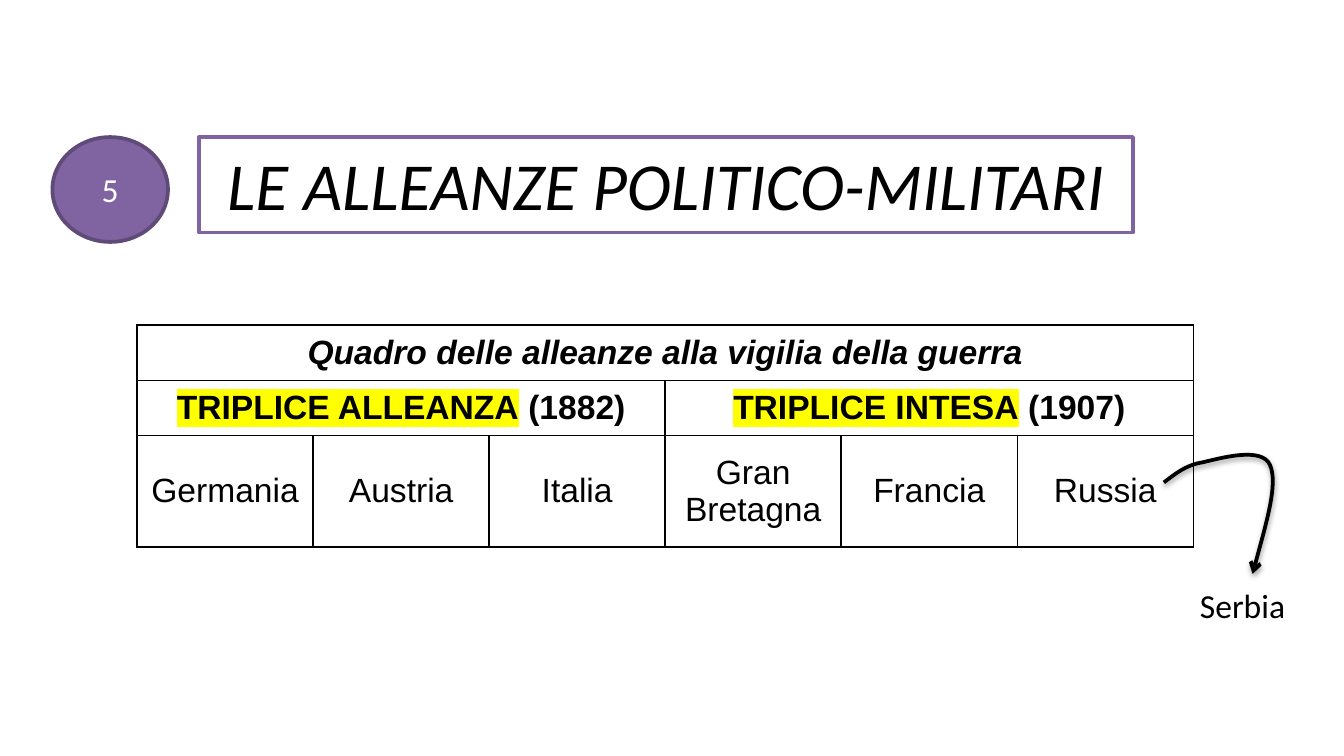
from lxml import etree
from pptx import Presentation
from pptx import util as u
from pptx.dml.color import RGBColor
from pptx.enum import shapes, text
from pptx.oxml import parse_xml
from pptx.oxml.ns import nsdecls, qn

BLACK = RGBColor(0x00, 0x00, 0x00)
WHITE = RGBColor(0xFF, 0xFF, 0xFF)
PURPLE = RGBColor(0x80, 0x64, 0xA2)
DARK_PURPLE = RGBColor(0x5F, 0x4A, 0x78)
YELLOW = RGBColor(0xFF, 0xFF, 0x00)

CENTER, LEFT = text.PP_ALIGN.CENTER, text.PP_ALIGN.LEFT
TOP, MIDDLE = text.MSO_ANCHOR.TOP, text.MSO_ANCHOR.MIDDLE


def grid(*cells):
    """Lengths on a square grid of 100 columns across the slide."""
    return [u.Inches(cell / 10) for cell in cells]


class SlideBuilder:
    font, table_font, size = "Calibri", "Arial", 18

    def __init__(self, presentation):
        self.slide = presentation.slides.add_slide(presentation.slide_layouts[6])

    def add_run(self, paragraph, words, color=BLACK, size=None, font=None,
                bold=False, italic=False, highlight=None):
        run = paragraph.add_run()
        run.text = words
        run.font.size = u.Pt(size or self.size)
        run.font.bold, run.font.italic = bold, italic
        run.font.color.rgb = color
        if highlight:
            mark = etree.SubElement(run.font._element, qn("a:highlight"))
            etree.SubElement(mark, qn("a:srgbClr"), val=str(highlight))
        run.font.name = font or self.font

    def fill_frame(self, frame, words, align=CENTER, anchor=TOP, grow=False, **style):
        frame.word_wrap = True
        frame.vertical_anchor = anchor
        if grow:
            frame.auto_size = text.MSO_AUTO_SIZE.SHAPE_TO_FIT_TEXT
        paragraph = frame.paragraphs[0]
        paragraph.alignment = align
        self.add_run(paragraph, words, **style)

    def shape(self, kind, box, fill, line, words, **style):
        shape = self.slide.shapes.add_shape(kind, *grid(*box))
        shape.shadow.inherit = False
        shape.fill.solid()
        shape.fill.fore_color.rgb = fill
        shape.line.color.rgb = line
        shape.line.width = u.Pt(2)
        self.fill_frame(shape.text_frame, words, **style)

    def label(self, box, words):
        shape = self.slide.shapes.add_textbox(*grid(*box))
        self.fill_frame(shape.text_frame, words, align=LEFT, grow=True)

    def border(self, cell):
        properties = cell._tc.get_or_add_tcPr()
        for position, side in enumerate(("lnL", "lnR", "lnT", "lnB")):
            properties.insert(position, parse_xml(
                f'<a:{side} {nsdecls("a")} w="12700"><a:solidFill>'
                f'<a:srgbClr val="{BLACK}"/></a:solidFill></a:{side}>'))

    def table(self, box, row_heights, rows):
        """Each row is a list of cells, each cell a list of (words, style) runs."""
        columns = max(len(row) for row in rows)
        table = self.slide.shapes.add_table(len(rows), columns, *grid(*box)).table
        table.first_row = table.horz_banding = False
        for row, height in zip(table.rows, grid(*row_heights)):
            row.height = height
        for cell in table.iter_cells():
            cell.fill.background()
            self.border(cell)
        for r, row in enumerate(rows):
            span = columns // len(row)
            for i, runs in enumerate(row):
                cell = table.cell(r, i * span)
                if span > 1:
                    cell.merge(table.cell(r, (i + 1) * span - 1))
                cell.margin_left = cell.margin_right = u.Inches(0.07)
                cell.margin_top = cell.margin_bottom = 0
                cell.vertical_anchor = MIDDLE
                paragraph = cell.text_frame.paragraphs[0]
                paragraph.alignment = CENTER
                for words, style in runs:
                    self.add_run(paragraph, words, font=self.table_font, **style)

    def curved_arrow(self, points):
        """Start point, then three points for each Bezier segment."""
        start, *rest = [grid(*point) for point in points]
        builder = self.slide.shapes.build_freeform(*start)
        builder.add_line_segments(rest, close=False)
        shape = builder.convert_to_shape()
        shape.fill.background()
        shape.line.color.rgb = BLACK
        shape.line.width = u.Pt(2)
        etree.SubElement(shape.line._get_or_add_ln(), qn("a:tailEnd"), type="arrow")

        # Turn each three straight steps into one curve
        path = shape._element.find(".//" + qn("a:path"))
        steps = path.findall(qn("a:lnTo"))
        for first in range(0, len(steps), 3):
            curve = etree.SubElement(path, qn("a:cubicBezTo"))
            for step in steps[first:first + 3]:
                curve.append(step[0])
                path.remove(step)

        # Soft shadow below the line
        shape.shadow.inherit = False
        effects = shape._element.spPr.find(qn("a:effectLst"))
        effects.append(parse_xml(
            f'<a:outerShdw {nsdecls("a")} blurRad="{u.Pt(3.1)}" dist="{u.Pt(1.6)}" '
            f'dir="5400000" rotWithShape="0"><a:srgbClr val="{BLACK}">'
            '<a:alpha val="38000"/></a:srgbClr></a:outerShdw>'))


def main():
    presentation = Presentation()
    presentation.slide_width, presentation.slide_height = grid(100, 56.25)
    builder = SlideBuilder(presentation)

    # Title and number
    builder.shape(shapes.MSO_SHAPE.RECTANGLE, (14.8, 10.2, 69.5, 7.1), WHITE, PURPLE,
                  "LE ALLEANZE POLITICO-MILITARI", size=36, italic=True, grow=True)
    builder.shape(shapes.MSO_SHAPE.OVAL, (3.9, 10.2, 8.6, 7.8), PURPLE, DARK_PURPLE,
                  "5", color=WHITE, anchor=MIDDLE)

    # Table of alliances
    bold = {"bold": True}
    marked = {"bold": True, "highlight": YELLOW}
    alliances = [("TRIPLICE ALLEANZA", " (1882)"), ("TRIPLICE INTESA", " (1907)")]
    countries = ["Germania", "Austria", "Italia", "Gran Bretagna", "Francia", "Russia"]
    builder.table((10.2, 24.2, 78.6, 16.5), (4.1, 4.1, 8.3), [
        [[("Quadro delle alleanze alla vigilia della guerra",
           {"bold": True, "italic": True})]],
        [[(name, marked), (year, bold)] for name, year in alliances],
        [[(country, {})] for country in countries],
    ])

    # Russia's link to Serbia
    builder.label((88.3, 43, 9.4, 4), "Serbia")
    builder.curved_arrow([
        (86.6, 35.9),
        (87.4, 35.3), (88.2, 34.6), (89.5, 34.4),
        (90.8, 34.1), (93.9, 33.2), (94.5, 34.6),
        (95.1, 36), (94.1, 39.3), (93.2, 42.7),
    ])

    presentation.save("out.pptx")


if __name__ == "__main__":
    main()
